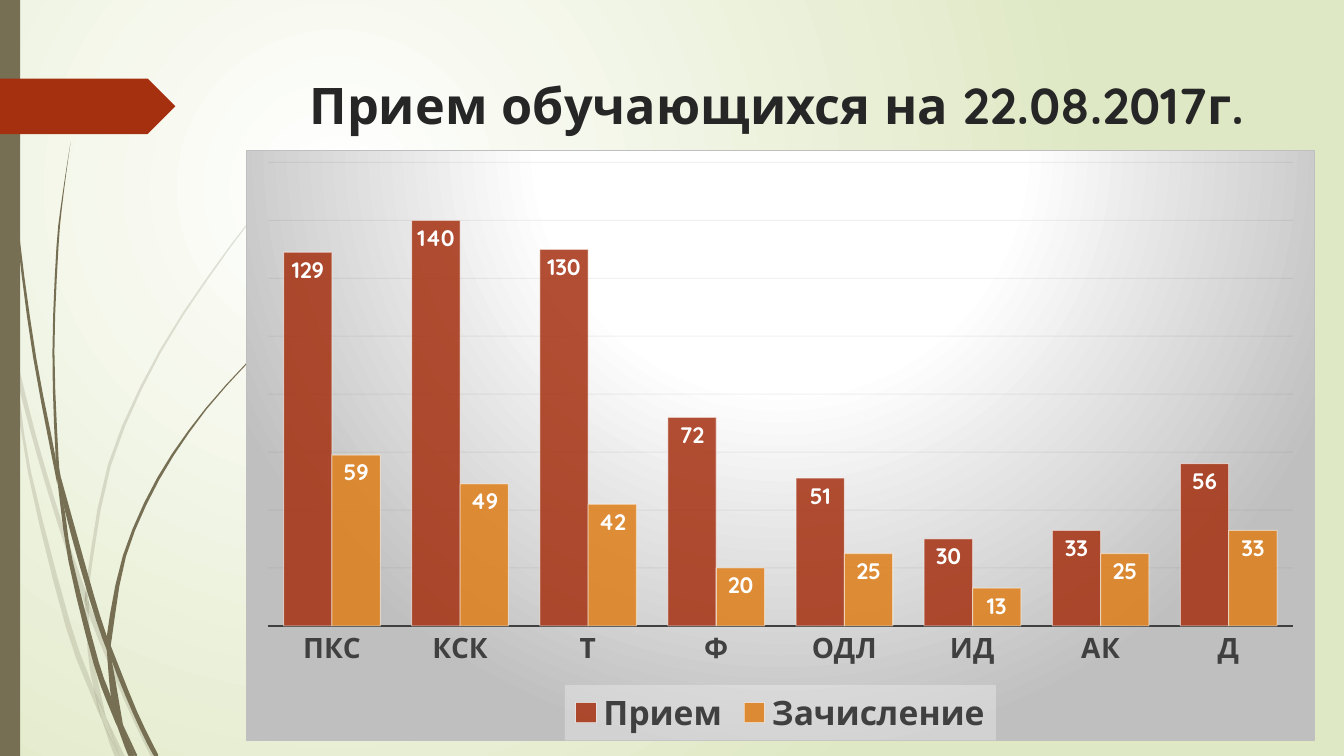
from pptx import Presentation
from pptx.chart.data import CategoryChartData
from pptx.dml.color import RGBColor
from pptx.enum.chart import XL_CHART_TYPE, XL_LABEL_POSITION, XL_LEGEND_POSITION, XL_TICK_MARK
from pptx.enum.shapes import MSO_SHAPE
from pptx.enum.text import MSO_ANCHOR, PP_ALIGN
from pptx.oxml import parse_xml
from pptx.oxml.ns import nsdecls, qn
from pptx.util import Inches, Pt

OLIVE = RGBColor(0x76, 0x6F, 0x54)
RUST = RGBColor(0xA5, 0x30, 0x10)
ORANGE = RGBColor(0xDE, 0x7E, 0x18)
INK = RGBColor(0x26, 0x26, 0x26)
GRAY = RGBColor(0x40, 0x40, 0x40)
SILVER = RGBColor(0xBF, 0xBF, 0xBF)
PALE = RGBColor(0xF2, 0xF2, 0xF2)
GRID = RGBColor(0x0D, 0x0D, 0x0D)
LIME = RGBColor(0xDF, 0xE8, 0xC4)
WHITE = RGBColor(0xFF, 0xFF, 0xFF)
FONT = "Quicksand"

FAINT_STRANDS = [
    ([(0, 2.82), (.09, 3.22), (.11, 3.5)], [(.1, 3.44), (0, 2.99)]),
    ([(.14, 3.45), (.36, 4.33), (.62, 5.2), (.85, 5.86)],
     [(.84, 5.99), (.58, 5.22), (.36, 4.49), (.17, 3.76)]),
    ([(.88, 5.96), (.92, 6.07), (1.27, 6.92), (1.55, 7.51)],
     [(1.5, 7.51), (1.23, 6.94), (.88, 6.1)]),
    ([(1.05, 7.11), (1.24, 7.51)], [(1.19, 7.51)]),
    ([(.11, 3.5), (.17, 3.76), (.31, 4.69), (.7, 6.19), (.93, 6.83), (1.01, 7.14)],
     [(.92, 6.93), (.65, 6.21), (.28, 4.7)]),
    ([(.84, 5.99), (.88, 6.1), (.91, 6.46), (1.05, 7.11)], [(.93, 6.83), (.87, 6.46)]),
    ([(.88, 5.96), (.88, 5.84), (1.1, 4.62), (1.6, 3.49), (2.29, 2.45), (2.68, 1.98), (3.12, 1.53)],
     [(2.68, 1.97), (2.28, 2.44), (1.58, 3.48), (1.07, 4.61), (.85, 5.84)]),
    ([(1.01, 7.14), (1.19, 7.51)], [(1.14, 7.51)]),
    ([(.85, 5.86), (.88, 5.96), (.88, 6.1)], [(.84, 5.99)]),
    ([(.93, 6.83), (1.05, 7.11), (1.19, 7.51)], [(1.01, 7.14)]),
]
DARK_STRANDS = [
    ([(.03, 0), (.07, 1.1), (.17, 2.33), (.33, 3.55), (.57, 4.81)],
     [(.55, 4.53), (.36, 3.55), (.19, 2.32), (.08, 1.09), (.04, 0)]),
    ([(.6, 4.72), (.93, 5.9), (1.06, 6.31)], [(1.06, 6.45), (.88, 5.92), (.64, 5.05)]),
    ([(1.1, 6.41), (1.36, 7.06), (1.57, 7.49)], [(1.52, 7.49), (1.32, 7.08), (1.11, 6.56)]),
    ([(.57, 4.77), (.64, 5.05), (.72, 5.56), (.98, 6.57), (1.1, 6.91), (1.17, 7.22)],
     [(1.11, 7.08), (.93, 6.59), (.68, 5.57)]),
    ([(.7, 1.41), (.62, 1.93), (.56, 2.45), (.52, 3.49), (.55, 4.49), (.6, 4.72)],
     [(.58, 4.53), (.54, 3.49), (.58, 2.45), (.63, 1.93)]),
    ([(1.22, 7.19), (1.36, 7.49)], [(1.33, 7.49)]),
    ([(.55, 4.49), (.6, 4.72), (.64, 5.05)], [(.57, 4.77)]),
    ([(2.61, 3.44), (2.05, 4.06), (1.58, 4.76), (1.25, 5.52), (1.11, 6.33), (1.1, 6.41)],
     [(1.06, 6.31), (1.22, 5.51), (1.56, 4.74), (2.04, 4.05), (2.6, 3.44)]),
    ([(1.17, 7.22), (1.31, 7.49)], [(1.27, 7.49)]),
    ([(1.06, 6.45), (1.11, 6.56), (1.22, 7.19)], [(1.16, 7.06), (1.1, 6.91)]),
    ([(1.06, 6.31), (1.1, 6.41), (1.11, 6.56)], [(1.06, 6.45)]),
    ([(1.1, 6.91), (1.22, 7.19), (1.33, 7.49)], [(1.3, 7.49), (1.17, 7.22)]),
]


def set_font(font, color, **values):
    for name, value in {"name": FONT, "bold": True, **values}.items():
        setattr(font, name, value)
    font.color.rgb = color


def set_line(line, color, width):
    line.color.rgb = color
    line.width = Pt(width)


def fade(parent, *percents):
    for clr, percent in zip(list(parent.iter(qn("a:srgbClr"))), percents):
        clr.append(parse_xml(f'<a:alpha {nsdecls("a")} val="{percent * 1000}"/>'))


def radial_fill(stops, left, top, right, bottom):
    gs = "".join(f'<a:gs pos="{pos * 1000}"><a:srgbClr val="{color}"/></a:gs>'
                 for pos, color in stops)
    return (f'<a:gradFill {nsdecls("a")} rotWithShape="1"><a:gsLst>{gs}</a:gsLst>'
            f'<a:path path="circle"><a:fillToRect l="{left * 1000}" t="{top * 1000}" '
            f'r="{right * 1000}" b="{bottom * 1000}"/></a:path></a:gradFill>')


def smooth_edge(points):
    steps = 3 if len(points) > 2 else 1
    ends = [points[0], *points, points[-1]]
    edge = []
    for a, b, c, d in zip(ends, ends[1:], ends[2:], ends[3:]):
        for i in range(steps):
            t = i / steps
            edge.append(tuple(
                q + t / 2 * (r - p + t * (2 * p - 5 * q + 4 * r - u + t * (3 * (q - r) + u - p)))
                for p, q, r, u in zip(a, b, c, d)))
    return edge + [points[-1]]


def paint(sp, color):
    sp.shadow.inherit = False
    sp.fill.solid()
    sp.fill.fore_color.rgb = color
    sp.line.fill.background()


def add_strands(s, strands, opacity):
    for front, back in strands:
        back_edge = smooth_edge([front[-1], *back, front[0]])[1:-1]
        outline = [(Inches(x), Inches(y)) for x, y in smooth_edge(front) + back_edge]
        builder = s.shapes.build_freeform(*outline[0])
        builder.add_line_segments(outline[1:], close=True)
        sp = builder.convert_to_shape()
        paint(sp, OLIVE)
        fade(sp.element.spPr, opacity)


def add_backdrop(s, height):
    fill = radial_fill([(0, WHITE), (100, LIME)], 50, 50, 100, 100)
    s.element.cSld.insert(0, parse_xml(
        f'<p:bg {nsdecls("p", "a")}><p:bgPr>{fill}<a:effectLst/></p:bgPr></p:bg>'))
    add_strands(s, FAINT_STRANDS, 20)
    add_strands(s, DARK_STRANDS, 100)
    bar = s.shapes.add_shape(MSO_SHAPE.RECTANGLE, 0, 0, Inches(.2), height)
    paint(bar, OLIVE)
    tag = s.shapes.add_shape(MSO_SHAPE.PENTAGON, 0, Inches(.78), Inches(1.74), Inches(.55))
    paint(tag, RUST)


def add_title(s, left, top, width, height):
    title = s.shapes.title
    box = {"left": left, "top": top, "width": width, "height": height}
    for name, value in box.items():
        setattr(title, name, Inches(value))
    tf = title.text_frame
    tf.word_wrap = True
    tf.vertical_anchor = MSO_ANCHOR.TOP
    tf.margin_top, tf.margin_right = Inches(.06), Inches(.12)
    p = tf.paragraphs[0]
    p.alignment = PP_ALIGN.CENTER
    r = p.add_run()
    r.text = "Прием обучающихся на 22.08.2017г."
    set_font(r.font, INK, size=Pt(36))


def add_admission_chart(s, *box):
    data = CategoryChartData()
    data.categories = ["ПКС", "КСК", "Т", "Ф", "ОДЛ", "ИД", "АК", "Д"]
    data.add_series("Прием", [129, 140, 130, 72, 51, 30, 33, 56])
    data.add_series("Зачисление", [59, 49, 42, 20, 25, 13, 25, 33])
    chart = s.shapes.add_chart(XL_CHART_TYPE.COLUMN_CLUSTERED, *map(Inches, box), data).chart
    chart.has_title = False
    chart.font.name, chart.font.size = FONT, Pt(10)

    cat, val = chart.category_axis, chart.value_axis
    cat.major_tick_mark = XL_TICK_MARK.NONE
    set_font(cat.tick_labels.font, GRAY, size=Pt(20))
    set_line(cat.format.line, GRAY, 1.5)
    limits = {"minimum_scale": 0, "maximum_scale": 160, "major_unit": 20, "visible": False}
    for name, value in limits.items():
        setattr(val, name, value)
    set_line(val.major_gridlines.format.line, GRID, .75)

    chart.has_legend = True
    chart.legend.position = XL_LEGEND_POSITION.BOTTOM
    chart.legend.include_in_layout = False
    set_font(chart.legend.font, GRAY, size=Pt(24))

    plot = chart.plots[0]
    plot.gap_width, plot.overlap, plot.vary_by_categories = 65, 0, False
    for series, color in zip(plot.series, (RUST, ORANGE)):
        series.format.fill.solid()
        series.format.fill.fore_color.rgb = color
        set_line(series.format.line, WHITE, .75)
        labels = series.data_labels
        labels.show_value = True
        labels.position = XL_LABEL_POSITION.INSIDE_END
        set_font(labels.font, WHITE, size=Pt(16))
    style_chart_xml(chart.element)


def style_chart_xml(root):
    for ser in root.iter(qn("c:ser")):
        fade(ser.find(qn("c:spPr")), 85, 50)
    fade(next(root.iter(qn("c:majorGridlines"))), 6)
    legend_fill = parse_xml(
        f'<c:spPr {nsdecls("c", "a")}><a:solidFill><a:srgbClr val="{PALE}"/></a:solidFill></c:spPr>')
    fade(legend_fill, 39)
    next(root.iter(qn("c:overlay"))).addnext(legend_fill)

    area = next(root.iter(qn("c:plotArea")))
    for old in area.findall(qn("c:layout")):
        area.remove(old)
    frame = {"x": .02, "y": .02, "w": .96, "h": .786}
    places = "".join(f'<c:{side}Mode val="edge"/>' for side in "xy")
    places += "".join(f'<c:{side} val="{value}"/>' for side, value in frame.items())
    area.insert(0, parse_xml(
        f'<c:layout {nsdecls("c")}><c:manualLayout><c:layoutTarget val="inner"/>'
        f'{places}</c:manualLayout></c:layout>'))

    fill = radial_fill([(0, WHITE), (39, WHITE), (100, SILVER)], 50, -80, 50, 180)
    root.find(qn("c:chart")).addnext(parse_xml(
        f'<c:spPr {nsdecls("c", "a")}>{fill}<a:ln w="{Pt(.75)}"><a:solidFill>'
        f'<a:srgbClr val="{SILVER}"/></a:solidFill></a:ln></c:spPr>'))


def main():
    prs = Presentation()
    prs.slide_width, prs.slide_height = Inches(13.33), Inches(7.5)
    s = prs.slides.add_slide(prs.slide_layouts[5])
    add_backdrop(s, prs.slide_height)
    add_title(s, 2.84, .68, 9.75, 1.4)
    add_admission_chart(s, 2.44, 1.49, 10.6, 5.86)
    prs.save("out.pptx")


if __name__ == "__main__":
    main()
